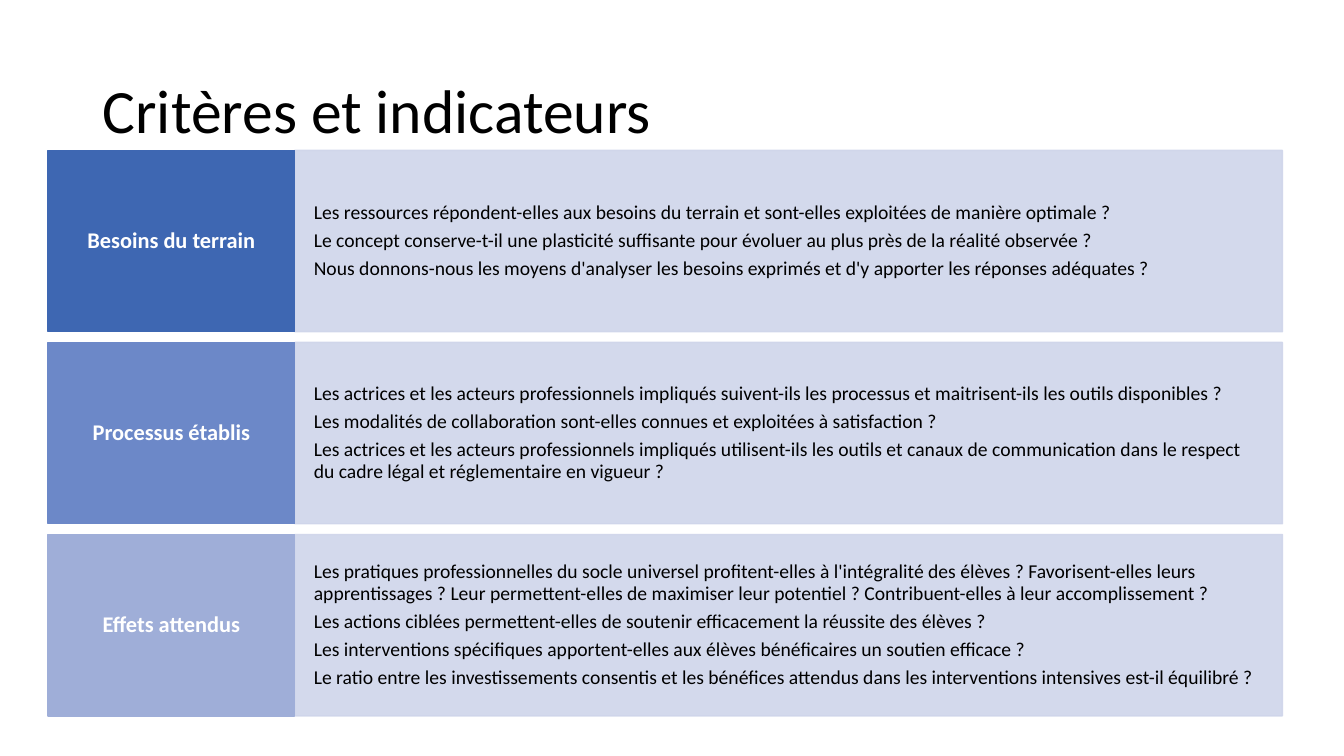
from dataclasses import dataclass

from lxml import etree
from pptx import Presentation
from pptx.dml.color import RGBColor
from pptx.enum.shapes import MSO_SHAPE
from pptx.enum.text import MSO_ANCHOR, PP_ALIGN
from pptx.oxml.ns import qn
from pptx.util import Cm, Pt

RECT = MSO_SHAPE.RECTANGLE
MIDDLE = MSO_ANCHOR.MIDDLE
LEFT, CENTER = PP_ALIGN.LEFT, PP_ALIGN.CENTER


@dataclass(frozen=True)
class Theme:
    font: str = "Calibri"
    black: str = "000000"
    white: str = "FFFFFF"
    panel: str = "CFD5EA"
    heads: tuple = ("3E67B2", "6C88C8", "9FAED8")
    title: int = 44
    label: int = 16
    body: int = 14


theme = Theme()

ROWS = [
    ("Besoins du terrain", [
        "Les ressources répondent-elles aux besoins du terrain et sont-elles exploitées de manière optimale ?",
        "Le concept conserve-t-il une plasticité suffisante pour évoluer au plus près de la réalité observée ?",
        "Nous donnons-nous les moyens d'analyser les besoins exprimés et d'y apporter les réponses adéquates ?",
    ]),
    ("Processus établis", [
        "Les actrices et les acteurs professionnels impliqués suivent-ils les processus et maitrisent-ils les outils disponibles ?",
        "Les modalités de collaboration sont-elles connues et exploitées à satisfaction ?",
        "Les actrices et les acteurs professionnels impliqués utilisent-ils les outils et canaux de communication "
        "dans le respect du cadre légal et réglementaire en vigueur ?",
    ]),
    ("Effets attendus", [
        "Les pratiques professionnelles du socle universel profitent-elles à l'intégralité des élèves ? "
        "Favorisent-elles leurs apprentissages ? Leur permettent-elles de maximiser leur potentiel ? "
        "Contribuent-elles à leur accomplissement ?",
        "Les actions ciblées permettent-elles de soutenir efficacement la réussite des élèves ?",
        "Les interventions spécifiques apportent-elles aux élèves bénéficaires un soutien efficace ?",
        "Le ratio entre les investissements consentis et les bénéfices attendus dans les interventions intensives est-il équilibré ?",
    ]),
]


def write(shape, lines, size, color, bold=False, align=LEFT, side=0.25, after=0):
    """Fill a shape with one paragraph per line; side is the inset in cm."""
    frame = shape.text_frame
    frame.word_wrap = True
    frame.vertical_anchor = MIDDLE
    frame.margin_left = frame.margin_right = Cm(side)
    frame.margin_top = frame.margin_bottom = Cm(0.13)
    for i, line in enumerate(lines):
        para = frame.add_paragraph() if i else frame.paragraphs[0]
        para.alignment = align
        para.line_spacing = 0.9
        para.space_after = Pt(after)
        run = para.add_run()
        run.text = line
        run.font.name = theme.font
        run.font.size = Pt(size)
        run.font.bold = bold
        run.font.color.rgb = RGBColor.from_string(color)


def block(left, top, width, height, color, alpha=100):
    """Add a rectangle whose fill and line share a colour and opacity in percent."""
    shape = slide.shapes.add_shape(RECT, Cm(left), Cm(top), Cm(width), Cm(height))
    shape.shadow.inherit = False
    shape.fill.solid()
    shape.line.fill.solid()
    shape.line.width = Pt(1)
    for fill in (shape.fill, shape.line.fill):
        fill.fore_color.rgb = RGBColor.from_string(color)
    if alpha < 100:
        for node in shape.fill._xPr.iter(qn("a:srgbClr")):
            etree.SubElement(node, qn("a:alpha")).set("val", str(alpha * 1000))
    return shape


deck = Presentation()
deck.slide_width, deck.slide_height = Cm(33.87), Cm(19.05)
slide = deck.slides.add_slide(deck.slide_layouts[6])

title = slide.shapes.add_textbox(Cm(2.34), Cm(1.02), Cm(29.21), Cm(3.68))
write(title, ["Critères et indicateurs"], theme.title, theme.black)

X, Y = 1.21, 3.79
HEAD, PANEL = 6.22, 24.89
HIGH, STEP = 4.57, 4.84

for i, (name, asks) in enumerate(ROWS):
    top = Y + i * STEP
    panel = block(X + HEAD, top, PANEL, HIGH, theme.panel, alpha=90)
    write(panel, asks, theme.body, theme.black, side=0.48, after=4.9)
    head = block(X, top, HEAD, HIGH, theme.heads[i])
    write(head, [name], theme.label, theme.white, bold=True, align=CENTER,
          side=0.33, after=5.6)

deck.save("out.pptx")
